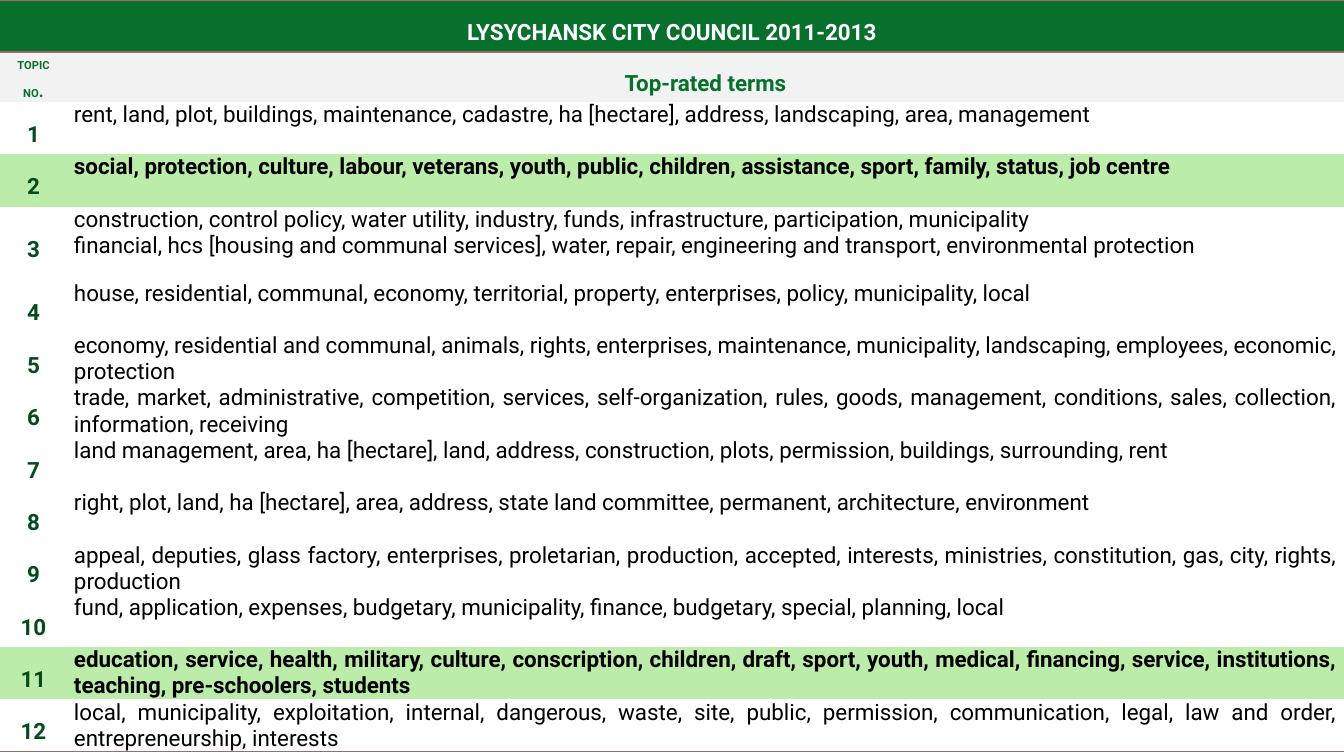
import pptx
import pptx.util
import pptx.dml.color
import pptx.enum.text
import pptx.oxml
import pptx.oxml.ns
from dataclasses import dataclass

# Content
HEADING = "LYSYCHANSK CITY COUNCIL 2011-2013"
TERMS_HEADER = "Top-rated terms"
HIGHLIGHTED = {2, 11}
TOPICS = [
    ["rent, land, plot, buildings, maintenance, cadastre, ha [hectare], address, landscaping, area, management"],
    ["social, protection, culture, labour, veterans, youth, public, children, assistance, sport, family, status, "
     "job centre"],
    ["construction, control policy, water utility, industry, funds, infrastructure, participation, municipality",
     "financial, hcs [housing and communal services], water, repair, engineering and transport, "
     "environmental protection"],
    ["house, residential, communal, economy, territorial, property, enterprises, policy, municipality, local"],
    ["economy, residential and communal, animals, rights, enterprises, maintenance, municipality, landscaping, "
     "employees, economic, protection"],
    ["trade, market, administrative, competition, services, self-organization, rules, goods, management, "
     "conditions, sales, collection, information, receiving"],
    ["land management, area, ha [hectare], land, address, construction, plots, permission, buildings, "
     "surrounding, rent"],
    ["right, plot, land, ha [hectare], area, address, state land committee, permanent, architecture, environment"],
    ["appeal, deputies, glass factory, enterprises, proletarian, production, accepted, interests, ministries, "
     "constitution, gas, city, rights, production"],
    ["fund, application, expenses, budgetary, municipality, finance, budgetary, special, planning, local"],
    ["education, service, health, military, culture, conscription, children, draft, sport, youth, medical, "
     "financing, service, institutions, teaching, pre-schoolers, students"],
    ["local, municipality, exploitation, internal, dangerous, waste, site, public, permission, communication, "
     "legal, law and order, entrepreneurship, interests"],
]


@dataclass(frozen=True)
class Theme:
    font: str = "Roboto"
    white: str = "FFFFFF"
    black: str = "000000"
    green: str = "07702C"
    number: str = "044B1E"
    grey: str = "F2F2F2"
    highlight: str = "BCECAA"
    rule: str = "9C6A6A"
    body: int = 16
    dot: int = 12
    small: int = 8


T = Theme()
ALIGN = pptx.enum.text.PP_ALIGN
ANCHOR = pptx.enum.text.MSO_ANCHOR

# Layout in px
PX = 914400 / 100.8
WIDTH, HEIGHT = 1344, 756
TABLE_H = 752
NUMBER_W = 67
HEADING_H, HEADER_H, TALL_H = 52, 50, 74
INSET = 7
ROW_H = (TABLE_H - HEADING_H - HEADER_H - TALL_H) / (len(TOPICS) - 1)


def emu(px):
    return pptx.util.Emu(round(px * PX))


def rgb(color):
    return pptx.dml.color.RGBColor.from_string(color)


def set_borders(cell, ruled):
    """Draw a thin rule on the given sides and leave the others bare."""
    tcPr = cell._tc.get_or_add_tcPr()
    for side in "LRTB":
        paint = f'<a:solidFill><a:srgbClr val="{T.rule}"/></a:solidFill>' if side in ruled else "<a:noFill/>"
        tcPr.append(pptx.oxml.parse_xml(
            f'<a:ln{side} {pptx.oxml.ns.nsdecls("a")} w="12700">{paint}</a:ln{side}>'))


def fill_cell(cell, paragraphs, color, fill=None, bold=True, terms=False, ruled=""):
    """Format a cell; paragraphs are lists of (text, size) runs."""
    set_borders(cell, ruled)
    if fill:
        cell.fill.solid()
        cell.fill.fore_color.rgb = rgb(fill)
    else:
        cell.fill.background()
    cell.margin_left = cell.margin_right = emu(INSET)
    cell.margin_top = cell.margin_bottom = 0
    cell.vertical_anchor = ANCHOR.TOP if terms else ANCHOR.MIDDLE
    tf = cell.text_frame
    for i, runs in enumerate(paragraphs):
        p = tf.add_paragraph() if i else tf.paragraphs[0]
        p.alignment = ALIGN.JUSTIFY if terms else ALIGN.CENTER
        p.line_spacing = 1.0 if terms else 1.5
        for text, size in runs:
            r = p.add_run()
            r.text = text
            r.font.name = T.font
            r.font.size = pptx.util.Pt(size)
            r.font.bold = bold
            r.font.color.rgb = rgb(color)


def main():
    prs = pptx.Presentation()
    prs.slide_width, prs.slide_height = emu(WIDTH), emu(HEIGHT)
    s = prs.slides.add_slide(prs.slide_layouts[6])

    # Table grid
    table = s.shapes.add_table(len(TOPICS) + 2, 2, 0, 0, emu(WIDTH), emu(TABLE_H)).table
    table.first_row = table.horz_banding = False
    table.columns[0].width = emu(NUMBER_W)
    table.columns[1].width = emu(WIDTH - NUMBER_W)
    heights = [HEADING_H, HEADER_H] + [TALL_H if len(terms) > 1 else ROW_H for terms in TOPICS]
    for row, height in zip(table.rows, heights):
        row.height = emu(height)

    # Heading and column headers
    table.cell(0, 0).merge(table.cell(0, 1))
    fill_cell(table.cell(0, 0), [[(HEADING, T.body)]], T.white, T.green, ruled="TB")
    set_borders(table.cell(0, 1), "TB")
    fill_cell(table.cell(1, 0), [[("TOPIC NO", T.small), (".", T.dot)]], T.green, T.grey, ruled="T")
    fill_cell(table.cell(1, 1), [[(TERMS_HEADER, T.body)]], T.green, T.grey, ruled="T")

    # Topics
    for number, terms in enumerate(TOPICS, 1):
        marked = number in HIGHLIGHTED
        fill = T.highlight if marked else None
        ruled = "B" if number == len(TOPICS) else ""
        fill_cell(table.cell(number + 1, 0), [[(str(number), T.body)]], T.number, fill, ruled=ruled)
        fill_cell(table.cell(number + 1, 1), [[(line, T.body)] for line in terms], T.black, fill,
                  bold=marked, terms=True, ruled=ruled)

    prs.save("out.pptx")


if __name__ == "__main__":
    main()
